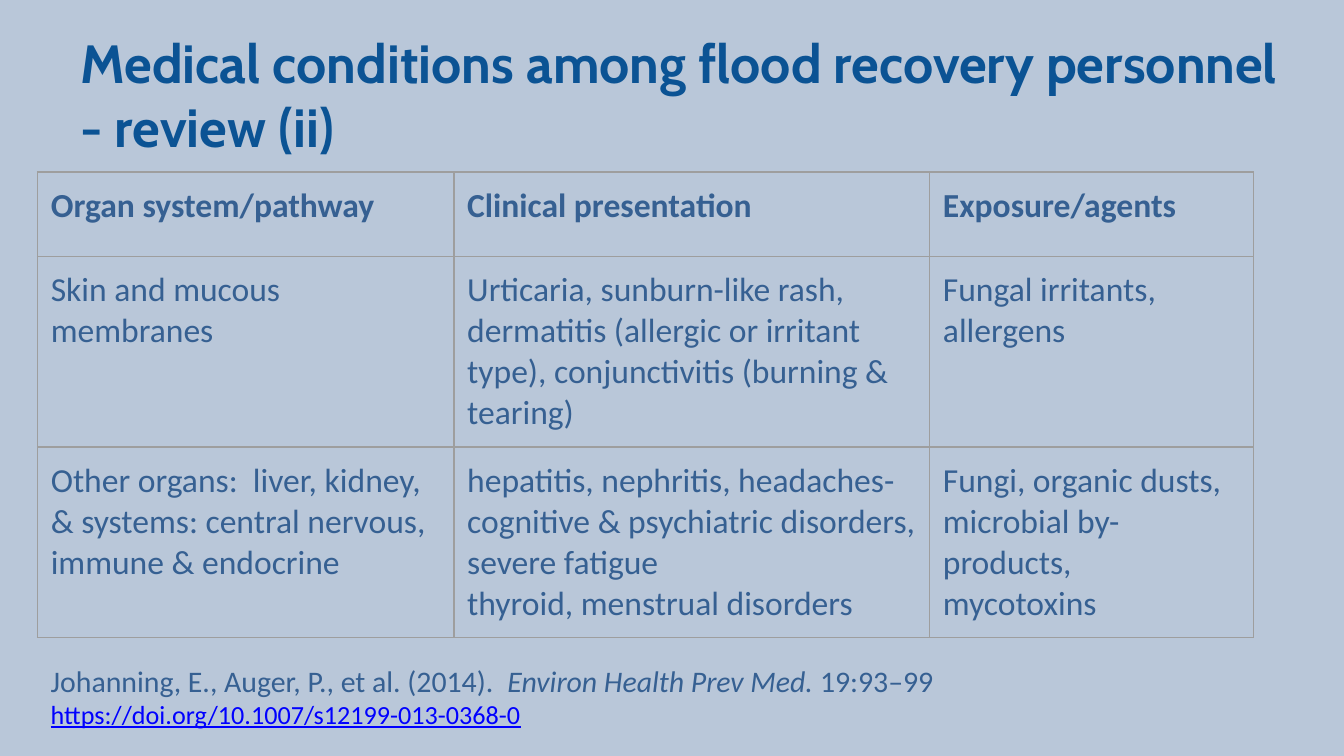
from lxml.etree import SubElement
from pptx import Presentation
from pptx.dml.color import RGBColor
from pptx.enum.text import MSO_ANCHOR, MSO_AUTO_SIZE, PP_ALIGN
from pptx.oxml.ns import qn
from pptx.util import Cm, Pt

HUES = {"back": "B9C7D9", "title": "0B5394", "text": "366092",
        "link": "0000FF", "rule": "9E9E9E"}
PAD = 0.25

# Each cell is a list of paragraphs
ROWS = [
    [["Organ system/pathway"], ["Clinical presentation"], ["Exposure/agents"]],
    [["Skin and mucous membranes"],
     ["Urticaria, sunburn-like rash, dermatitis (allergic or irritant type), "
      "conjunctivitis (burning & tearing)"],
     ["Fungal irritants, allergens"]],
    [["Other organs:  liver, kidney, & systems: central nervous, "
      "immune & endocrine"],
     ["hepatitis, nephritis, headaches-cognitive & psychiatric disorders, "
      "severe fatigue", "thyroid, menstrual disorders"],
     ["Fungi, organic dusts,", "microbial by-products,", "mycotoxins"]],
]
WIDTHS = [7.87, 8.99, 6.12]
HEIGHTS = [1.6, 3.56, 3.56]


def add_run(para, text, size, hue="text", face="Calibri", bold=False,
            italic=False, under=False):
    run = para.add_run()
    run.text = text
    font = run.font
    font.size, font.name = Pt(size), face
    font.bold, font.italic, font.underline = bold, italic, under
    font.color.rgb = RGBColor.from_string(HUES[hue])


def get_para(frame, index):
    return frame.add_paragraph() if index else frame.paragraphs[0]


def set_pad(item, across, down):
    item.margin_left = item.margin_right = Cm(across)
    item.margin_top = item.margin_bottom = Cm(down)


def add_rules(cell):
    props = cell._tc.get_or_add_tcPr()
    for side in ("L", "R", "T", "B"):
        line = SubElement(props, qn(f"a:ln{side}"), w=str(Pt(0.75)))
        fill = SubElement(line, qn("a:solidFill"))
        SubElement(fill, qn("a:srgbClr"), val=HUES["rule"])


def put_title(slide, left, top, width, height):
    title = slide.shapes.title
    title.left, title.top = Cm(left), Cm(top)
    title.width, title.height = Cm(width), Cm(height)
    frame = title.text_frame
    frame.word_wrap = True
    frame.auto_size = MSO_AUTO_SIZE.NONE
    frame.vertical_anchor = MSO_ANCHOR.MIDDLE
    set_pad(frame, PAD, 0.13)
    para = frame.paragraphs[0]
    para.alignment = PP_ALIGN.LEFT
    add_run(para, "Medical conditions among flood recovery personnel "
            "- review (ii)", 28.8, "title", "Cabin", bold=True)


def put_table(slide, left, top, width, height):
    table = slide.shapes.add_table(len(ROWS), len(WIDTHS), Cm(left), Cm(top),
                                   Cm(width), Cm(height)).table
    table.first_row = table.horz_banding = False
    for col, size in zip(table.columns, WIDTHS):
        col.width = Cm(size)
    for row, size in zip(table.rows, HEIGHTS):
        row.height = Cm(size)
    for r, row in enumerate(ROWS):
        for c, lines in enumerate(row):
            cell = table.cell(r, c)
            set_pad(cell, PAD, PAD)
            add_rules(cell)
            cell.fill.background()
            for i, line in enumerate(lines):
                add_run(get_para(cell.text_frame, i), line, 18, bold=r == 0)


def put_source(slide, left, top, width, height):
    box = slide.shapes.add_textbox(Cm(left), Cm(top), Cm(width), Cm(height))
    frame = box.text_frame
    frame.word_wrap = True
    set_pad(frame, PAD, PAD)
    cite = get_para(frame, 0)
    add_run(cite, "Johanning, E., Auger, P., et al. (2014).  ", 16)
    add_run(cite, "Environ Health Prev Med. ", 16, italic=True)
    add_run(cite, "19:93–99", 16)
    add_run(get_para(frame, 1), "https://doi.org/10.1007/s12199-013-0368-0",
            14, "link", under=True)


def main():
    deck = Presentation()
    deck.slide_width, deck.slide_height = Cm(25.4), Cm(14.29)
    slide = deck.slides.add_slide(deck.slide_layouts[5])
    fill = slide.background.fill
    fill.solid()
    fill.fore_color.rgb = RGBColor.from_string(HUES["back"])
    put_title(slide, 1.27, 0.58, 23.57, 2.39)
    put_table(slide, 0.71, 3.25, sum(WIDTHS), sum(HEIGHTS))
    put_source(slide, 0.71, 12.27, 24.69, 1.88)
    deck.save("out.pptx")


if __name__ == "__main__":
    main()
